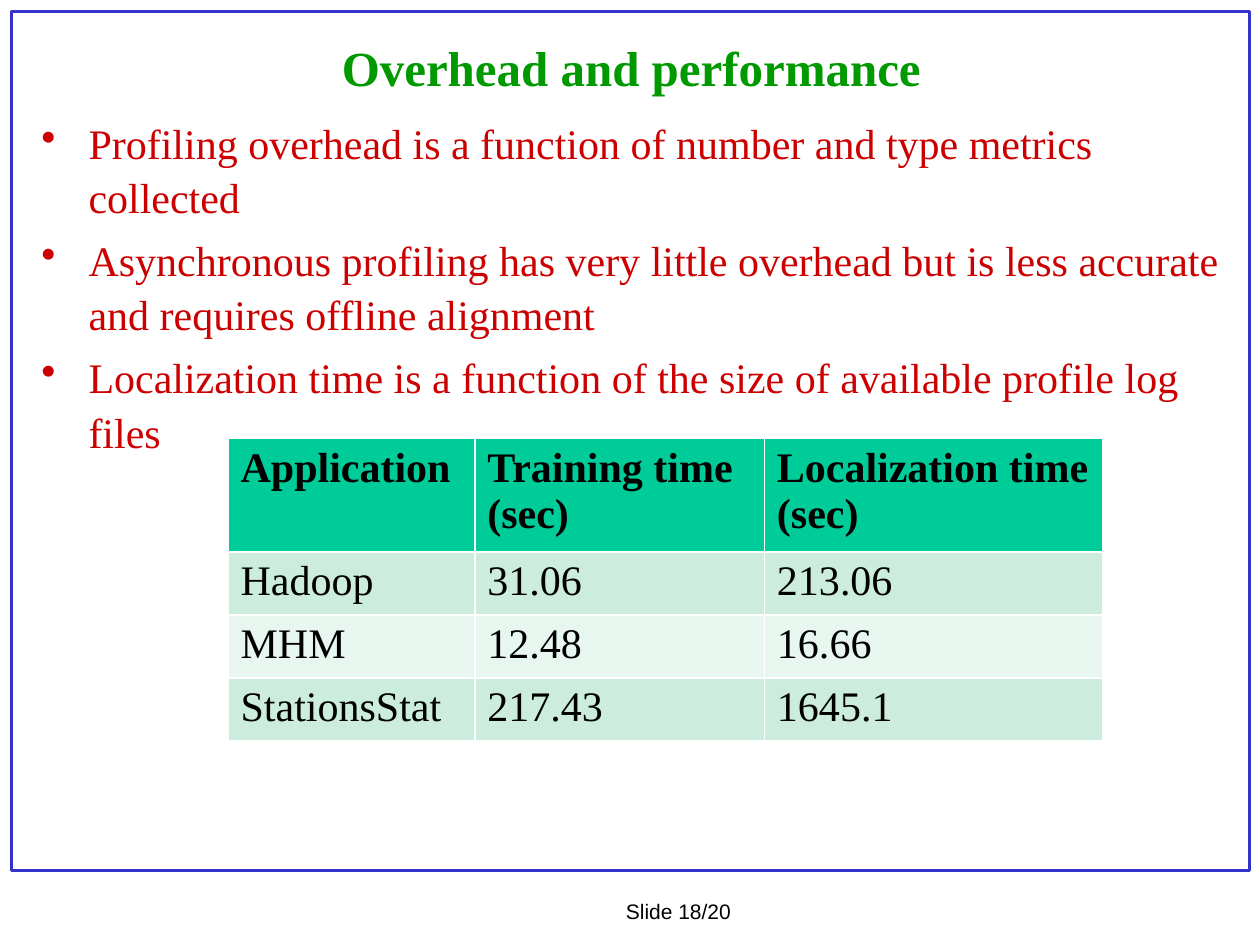
from pptx import Presentation
from pptx.dml.color import RGBColor
from pptx.enum.shapes import MSO_SHAPE
from pptx.enum.text import MSO_ANCHOR, PP_ALIGN
from pptx.oxml.ns import qn
from pptx.util import Pt
from lxml import etree

RECT = MSO_SHAPE.RECTANGLE
MIDDLE = MSO_ANCHOR.MIDDLE
CENTER = PP_ALIGN.CENTER

BLUE = RGBColor(0x33, 0x33, 0xCC)
GREEN = RGBColor(0x00, 0x99, 0x00)
RED = RGBColor(0xCC, 0x00, 0x00)
BLACK = RGBColor(0x00, 0x00, 0x00)
TEAL = RGBColor(0x00, 0xCC, 0x99)
BANDS = RGBColor(0xCC, 0xEC, 0xDE), RGBColor(0xE7, 0xF6, 0xEF)

SERIF = "Times New Roman"
HEAD = {"name": SERIF, "size": Pt(28), "bold": True, "color": GREEN}
BODY = {"name": SERIF, "size": Pt(24), "bold": False, "color": RED}
CELL = {**BODY, "color": BLACK}
FOOT = {"name": "Arial", "size": Pt(12), "color": BLACK}

POINTS = [
    "Profiling overhead is a function of number and type metrics collected",
    "Asynchronous profiling has very little overhead but is less accurate "
    "and requires offline alignment",
    "Localization time is a function of the size of available profile log files",
]
ROWS = [
    ["Application", "Training time (sec)", "Localization time (sec)"],
    ["Hadoop", "31.06", "213.06"],
    ["MHM", "12.48", "16.66"],
    ["StationsStat", "217.43", "1645.1"],
]
WIDTHS = 141, 165.5, 193.5


def style(para, form):
    for key, value in form.items():
        if key == "color":
            para.font.color.rgb = value
        else:
            setattr(para.font, key, value)


def place(shape, box):
    for key, value in zip(("left", "top", "width", "height"), box):
        setattr(shape, key, Pt(value))


def add_frame(slide, box):
    frame = slide.shapes.add_shape(RECT, *map(Pt, box))
    frame.shadow.inherit = False
    frame.fill.background()
    frame.line.color.rgb = BLUE
    frame.line.width = Pt(1.5)


def add_footer(slide, box):
    text = slide.shapes.add_textbox(*map(Pt, box)).text_frame
    text.word_wrap = False
    text.text = "Slide 18/20"
    style(text.paragraphs[0], FOOT)


def set_title(slide, box):
    title = slide.shapes.title
    place(title, box)
    text = title.text_frame
    text.text = "Overhead and performance"
    text.vertical_anchor = MIDDLE
    para = text.paragraphs[0]
    para.alignment = CENTER
    style(para, HEAD)


def add_points(slide, box):
    text = slide.shapes.add_textbox(*map(Pt, box)).text_frame
    text.word_wrap = True
    for i, point in enumerate(POINTS):
        para = text.paragraphs[0] if i == 0 else text.add_paragraph()
        para.text = point
        # Hanging bullet
        props = para._p.get_or_add_pPr()
        props.set("marL", str(Pt(27)))
        props.set("indent", str(-Pt(27)))
        etree.SubElement(props, qn("a:buChar")).set("char", "•")
        para.line_spacing = 1.08
        para.space_before = Pt(4.8 if i else 0)
        style(para, BODY)


def add_times(slide, box):
    shape = slide.shapes.add_table(len(ROWS), len(WIDTHS), *map(Pt, box))
    table = shape.table
    for col, width in zip(table.columns, WIDTHS):
        col.width = Pt(width)
    for r, row in enumerate(ROWS):
        # The header wraps to two lines
        table.rows[r].height = Pt(33.7 if r else 60)
        for c, value in enumerate(row):
            cell = table.cell(r, c)
            cell.text = value
            cell.fill.solid()
            cell.fill.fore_color.rgb = BANDS[(r - 1) % 2] if r else TEAL
            style(cell.text_frame.paragraphs[0], {**CELL, "bold": r == 0})


def main():
    deck = Presentation()
    deck.slide_width, deck.slide_height = Pt(720), Pt(540)
    slide = deck.slides.add_slide(deck.slide_layouts[5])
    # Page frame and number
    add_frame(slide, (6.5, 6.5, 707.5, 491))
    add_footer(slide, (350.6, 510, 75.6, 21.6))
    # Content
    set_title(slide, (17.3, 17.3, 686.9, 41.8))
    add_points(slide, (16.5, 61.2, 688.5, 425.5))
    add_times(slide, (130.3, 250.6, 500, 161.1))
    deck.save("out.pptx")


if __name__ == "__main__":
    main()
